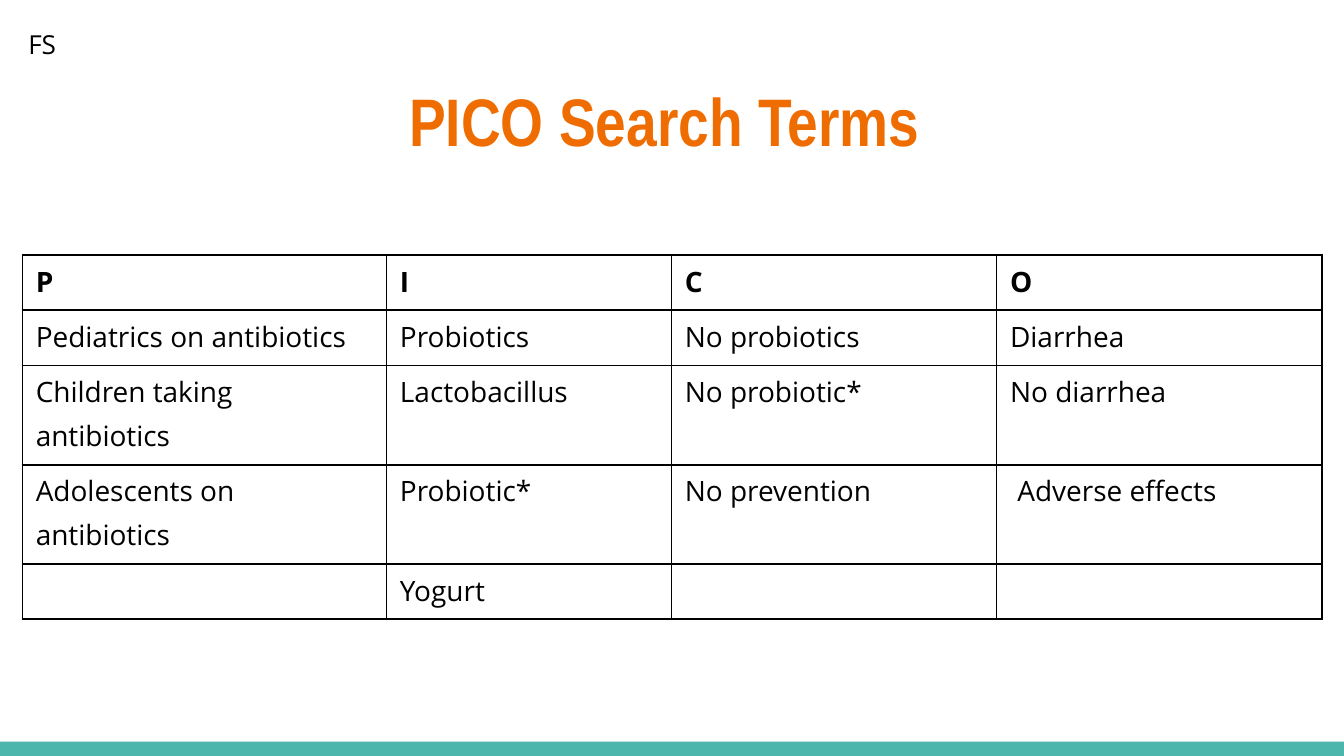
import pptx
import pptx.util
import pptx.dml.color
import pptx.enum.shapes
import pptx.enum.text
import pptx.oxml
import pptx.oxml.ns

WIDE = 10
HIGH = WIDE * 9 / 16
INK, ORANGE, TEAL, WHITE = "000000", "EF6C00", "4DB6AC", "FFFFFF"
inch = pptx.util.Inches
align = pptx.enum.text.PP_ALIGN
anchor = pptx.enum.text.MSO_ANCHOR
fit = pptx.enum.text.MSO_AUTO_SIZE

COLS = (2.71, 2.12, 2.42, 2.42)
ROWS = (0.41, 0.41, 0.74, 0.74, 0.41)
TERMS = (
    ("P", "I", "C", "O"),
    ("Pediatrics on antibiotics", "Probiotics", "No probiotics", "Diarrhea"),
    ("Children taking antibiotics", "Lactobacillus", "No probiotic*", "No diarrhea"),
    ("Adolescents on antibiotics", "Probiotic*", "No prevention", " Adverse effects"),
    ("", "Yogurt", "", ""),
)


def color(code):
    """Turn a hex string into a colour."""
    return pptx.dml.color.RGBColor.from_string(code)


def apply(target, values):
    """Set each named attribute on the target."""
    for name, value in values.items():
        setattr(target, name, value)


def share(left, top, width, height):
    """Turn percentages of the slide into a box of lengths."""
    sides = (WIDE, HIGH, WIDE, HIGH)
    return [inch(part * side / 100) for part, side in zip((left, top, width, height), sides)]


def place(shape, box):
    """Move a shape into its box."""
    apply(shape, dict(zip(("left", "top", "width", "height"), box)))


def pad(side, top, base):
    """Give the four margins of a frame or cell."""
    return {"margin_left": inch(side), "margin_right": inch(side),
            "margin_top": inch(top), "margin_bottom": inch(base)}


def write(frame, text, size, face, code, bold=False, **para):
    """Write one formatted run into a text frame."""
    line = frame.paragraphs[0]
    apply(line, para)
    run = line.add_run()
    run.text = text
    apply(run.font, {"size": pptx.util.Pt(size), "name": face, "bold": bold})
    run.font.color.rgb = color(code)


def label(shape, box, text, size, face, code, **look):
    """Place a text shape and fill it with one line."""
    place(shape, box)
    frame = shape.text_frame
    apply(frame, {"word_wrap": True, "auto_size": fit.NONE,
                  "vertical_anchor": anchor.TOP, **pad(0.1, 0.1, 0.1)})
    write(frame, text, size, face, code, **look)


def edge(cell, code, width):
    """Draw solid borders on all sides of a cell."""
    props = cell._tc.get_or_add_tcPr()
    for spot, side in enumerate(("lnL", "lnR", "lnT", "lnB")):
        props.insert(spot, pptx.oxml.parse_xml(
            f'<a:{side} {pptx.oxml.ns.nsdecls("a")} w="{pptx.util.Pt(width)}">'
            f'<a:solidFill><a:srgbClr val="{code}"/></a:solidFill></a:{side}>'))


def grid(slide, box):
    """Build the table of search terms."""
    table = slide.shapes.add_table(len(ROWS), len(COLS), *box).table
    apply(table, {"first_row": False, "horz_banding": False})
    for col, size in zip(table.columns, COLS):
        col.width = int(box[2] * size / sum(COLS))
    for row, size in zip(table.rows, ROWS):
        row.height = int(box[3] * size / sum(ROWS))
    for r, terms in enumerate(TERMS):
        for c, term in enumerate(terms):
            cell = table.cell(r, c)
            apply(cell, pad(0.1, 0.01, 0.07))
            cell.fill.background()
            edge(cell, INK, 1)
            if term:
                write(cell.text_frame, term, 15, "Open Sans", INK,
                      bold=r == 0, line_spacing=1.15)


def band(slide, box):
    """Draw the coloured strip along the foot."""
    strip = slide.shapes.add_shape(pptx.enum.shapes.MSO_SHAPE.RECTANGLE, *box)
    strip.shadow.inherit = False
    strip.fill.solid()
    strip.fill.fore_color.rgb = color(TEAL)
    strip.line.fill.background()


def main():
    """Build and save the slide."""
    deck = pptx.Presentation()
    apply(deck, {"slide_width": inch(WIDE), "slide_height": inch(HIGH)})
    slide = deck.slides.add_slide(deck.slide_layouts[5])
    slide.background.fill.solid()
    slide.background.fill.fore_color.rgb = color(WHITE)
    band(slide, share(0, 98.1, 100, 1.9))
    label(slide.shapes.title, share(3.4, 8.7, 93.2, 13.7), "PICO Search Terms ",
          36, "Arial Narrow", ORANGE, bold=True, alignment=align.CENTER)
    grid(slide, share(1.66, 33.75, 100 * sum(COLS) / WIDE, 100 * sum(ROWS) / HIGH))
    box = share(1.12, 2, 6.1, 7.8)
    label(slide.shapes.add_textbox(*box), box, "FS", 14, "Open Sans", INK)
    deck.save("out.pptx")


if __name__ == "__main__":
    main()
